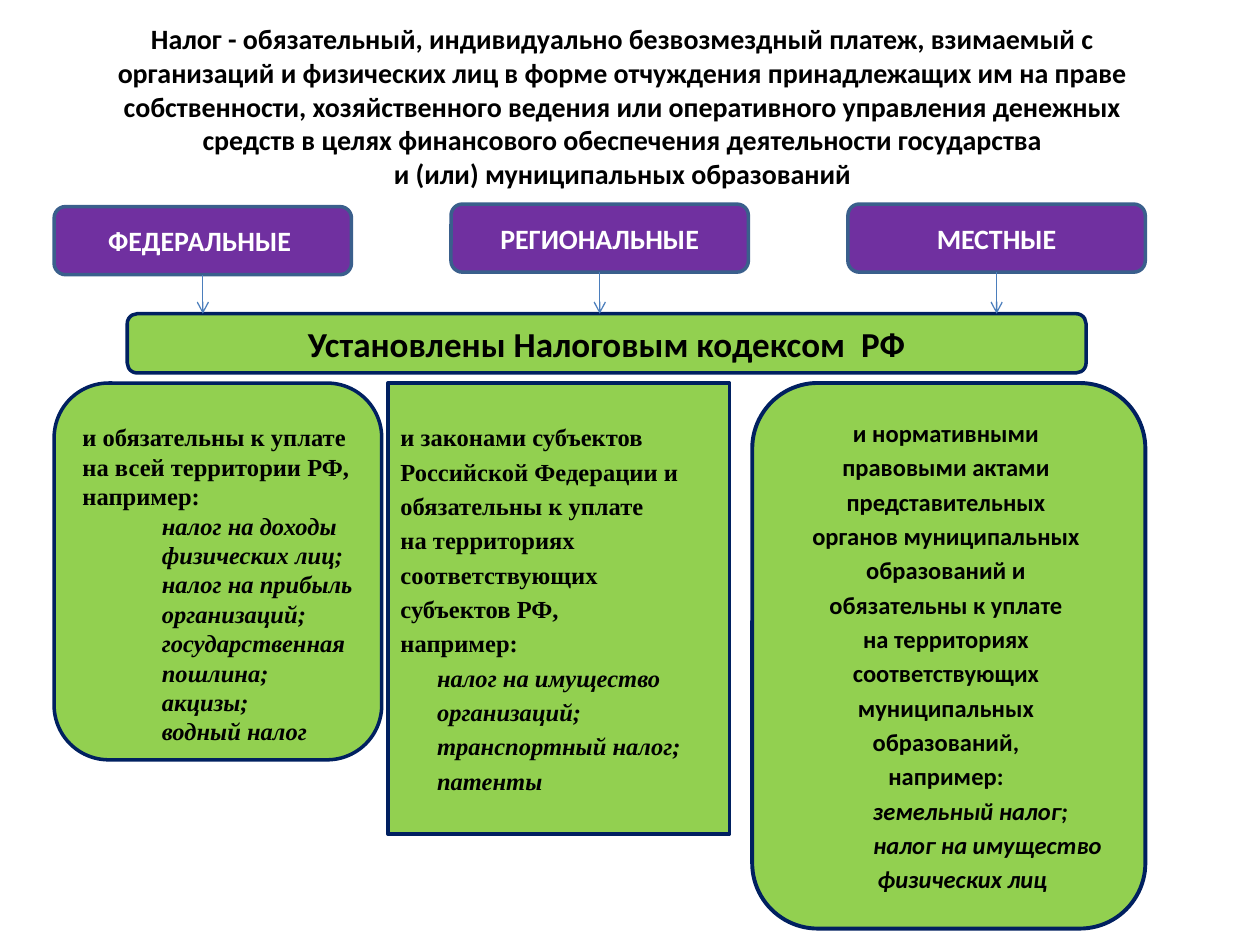
from pptx import Presentation
from pptx.dml.color import RGBColor
from pptx.enum.shapes import MSO_CONNECTOR, MSO_SHAPE
from pptx.enum.text import MSO_ANCHOR, PP_ALIGN
from pptx.oxml.ns import qn
from pptx.util import Inches, Pt
from lxml.etree import SubElement

COLS, ROWS = 100, 75
WIDTH, HEIGHT = Inches(10), Inches(7.5)
PURPLE, GREEN, NAVY, STEEL, BLUE = "7030A0", "92D050", "002060", "3A5F8C", "4B7EBC"
BLACK, WHITE = "000000", "FFFFFF"
SERIF, SANS = "Times New Roman", "Calibri"
LEFT, PITCH, TOP = 4.3, 31.5, 30.4

DEFINITION = [
    "Налог - обязательный, индивидуально безвозмездный платеж, взимаемый с ",
    "организаций и физических лиц в форме отчуждения принадлежащих им на праве ",
    "собственности, хозяйственного ведения или оперативного управления денежных ",
    "средств в целях финансового обеспечения деятельности государства ",
    "и (или) муниципальных образований ",
]
LEVELS = [("ФЕДЕРАЛЬНЫЕ ", 16.4), ("РЕГИОНАЛЬНЫЕ", 16.2), ("МЕСТНЫЕ", 16.2)]
FEDERAL = ["и обязательны к уплате", "на всей территории РФ,", "например:"]
FEDERAL_TAXES = ["налог на доходы", "физических лиц;", "налог на прибыль", "организаций;",
                 "государственная", "пошлина;", "акцизы;", "водный налог"]
REGIONAL = ["и законами субъектов ", "Российской Федерации и ", "обязательны к уплате ",
            "на территориях ", "соответствующих ", "субъектов РФ, ", "например: "]
REGIONAL_TAXES = ["налог на имущество ", "организаций; ", "транспортный налог; ", "патенты "]
LOCAL = ["и нормативными ", "правовыми актами ", "представительных ", "органов муниципальных ",
         "образований и ", "обязательны к уплате ", "на территориях ", "соответствующих ",
         "муниципальных ", "образований, ", "например: "]
LOCAL_TAXES = ["земельный налог; ", "налог на имущество ", "физических лиц "]


def rgb(value):
    """Turn a hex string into a colour."""
    return RGBColor.from_string(value)


def grid(x, y):
    """Turn grid columns and rows into slide lengths."""
    return int(WIDTH * x / COLS), int(HEIGHT * y / ROWS)


def place(sp, box):
    """Set the position and size of a shape from a grid box."""
    sp.left, sp.top = grid(*box[:2])
    sp.width, sp.height = grid(*box[2:])


def style(p, size, color=BLACK, font=SANS, italic=False):
    """Format every run of a paragraph in bold."""
    for r in p.runs:
        for name, value in dict(size=Pt(size), name=font, bold=True, italic=italic).items():
            setattr(r.font, name, value)
        r.font.color.rgb = rgb(color)


def add_title(s, box):
    """Place the definition of a tax in the title."""
    sp = s.shapes.title
    place(sp, box)
    tf = sp.text_frame
    tf.word_wrap, tf.vertical_anchor = True, MSO_ANCHOR.MIDDLE
    p = tf.paragraphs[0]
    p.text = "\v".join(DEFINITION)
    p.alignment = PP_ALIGN.CENTER
    style(p, 16)


def add_panel(s, box, fill, line, kind=MSO_SHAPE.ROUNDED_RECTANGLE, weight=2):
    """Draw a filled, outlined panel and return it."""
    sp = s.shapes.add_shape(kind, *grid(*box[:2]), *grid(*box[2:]))
    sp.shadow.inherit = False
    sp.fill.solid()
    sp.fill.fore_color.rgb = rgb(fill)
    sp.line.color.rgb = rgb(line)
    sp.line.width = Pt(weight)
    sp.text_frame.word_wrap = True
    sp.text_frame.vertical_anchor = MSO_ANCHOR.MIDDLE
    return sp


def add_label(s, box, text, fill, line, size, color):
    """Draw a panel with one centred line of text."""
    sp = add_panel(s, box, fill, line)
    p = sp.text_frame.paragraphs[0]
    p.text, p.alignment = text, PP_ALIGN.CENTER
    style(p, size, color)
    return sp


def add_arrow(s, header, end_row):
    """Run an arrow from the bottom of a header down to a grid row."""
    x = header.left + header.width // 2
    c = s.shapes.add_connector(MSO_CONNECTOR.STRAIGHT, x, header.top + header.height,
                               x, grid(0, end_row)[1])
    c.begin_connect(header, 2)
    c.line.color.rgb = rgb(BLUE)
    c.line.width = Pt(0.75)
    SubElement(c.line._get_or_add_ln(), qn("a:tailEnd"), type="arrow")
    SubElement(c._element.spPr, qn("a:effectLst"))


def add_levels(s, bar_row):
    """Draw the three tax levels with arrows to the bar."""
    for i, (text, row) in enumerate(LEVELS):
        header = add_label(s, (LEFT + i * PITCH, row, 23.6, 5.4), text, PURPLE, STEEL, 16, WHITE)
        add_arrow(s, header, bar_row)


def add_details(s, box, rules, taxes, indents, font, align, gap=2.8, top=0.05, **look):
    """Draw a panel with rules followed by indented example taxes in italics."""
    tf = add_panel(s, box, GREEN, NAVY, **look).text_frame
    tf.margin_top = Inches(top)
    lines = [(text, 0) for text in rules] + list(zip(taxes, indents))
    for i, (text, indent) in enumerate(lines):
        p = tf.add_paragraph() if i else tf.paragraphs[0]
        p.text = text
        for name, value in dict(alignment=align, space_before=Pt(gap),
                                line_spacing=Pt(16.8)).items():
            setattr(p, name, value)
        p._p.get_or_add_pPr().set("indent", str(Inches(indent)))
        style(p, 14, font=font, italic=i >= len(rules))


def main():
    """Build the slide about the kinds of taxes."""
    prs = Presentation()
    prs.slide_width, prs.slide_height = WIDTH, HEIGHT
    s = prs.slides.add_slide(prs.slide_layouts[5])
    add_title(s, (2, 1.3, 95.3, 14.2))
    add_details(s, (30.8, TOP, 27.1, 35.8), REGIONAL, REGIONAL_TAXES, [0.29] * 4,
                SERIF, PP_ALIGN.JUSTIFY, kind=MSO_SHAPE.RECTANGLE)
    add_label(s, (10.1, 24.9, 76.1, 4.7), "Установлены Налоговым кодексом  РФ",
              GREEN, NAVY, 20, BLACK)
    add_details(s, (LEFT, TOP, 26, 29.9), FEDERAL, FEDERAL_TAXES, [0.63] * 8,
                SERIF, PP_ALIGN.LEFT, gap=0, top=0.25)
    add_details(s, (59.7, TOP, 31.2, 43.3), LOCAL, LOCAL_TAXES, [0.39, 0.66, 0.26],
                SANS, PP_ALIGN.CENTER, weight=2.25)
    add_levels(s, 24.9)
    prs.save("out.pptx")


if __name__ == "__main__":
    main()
